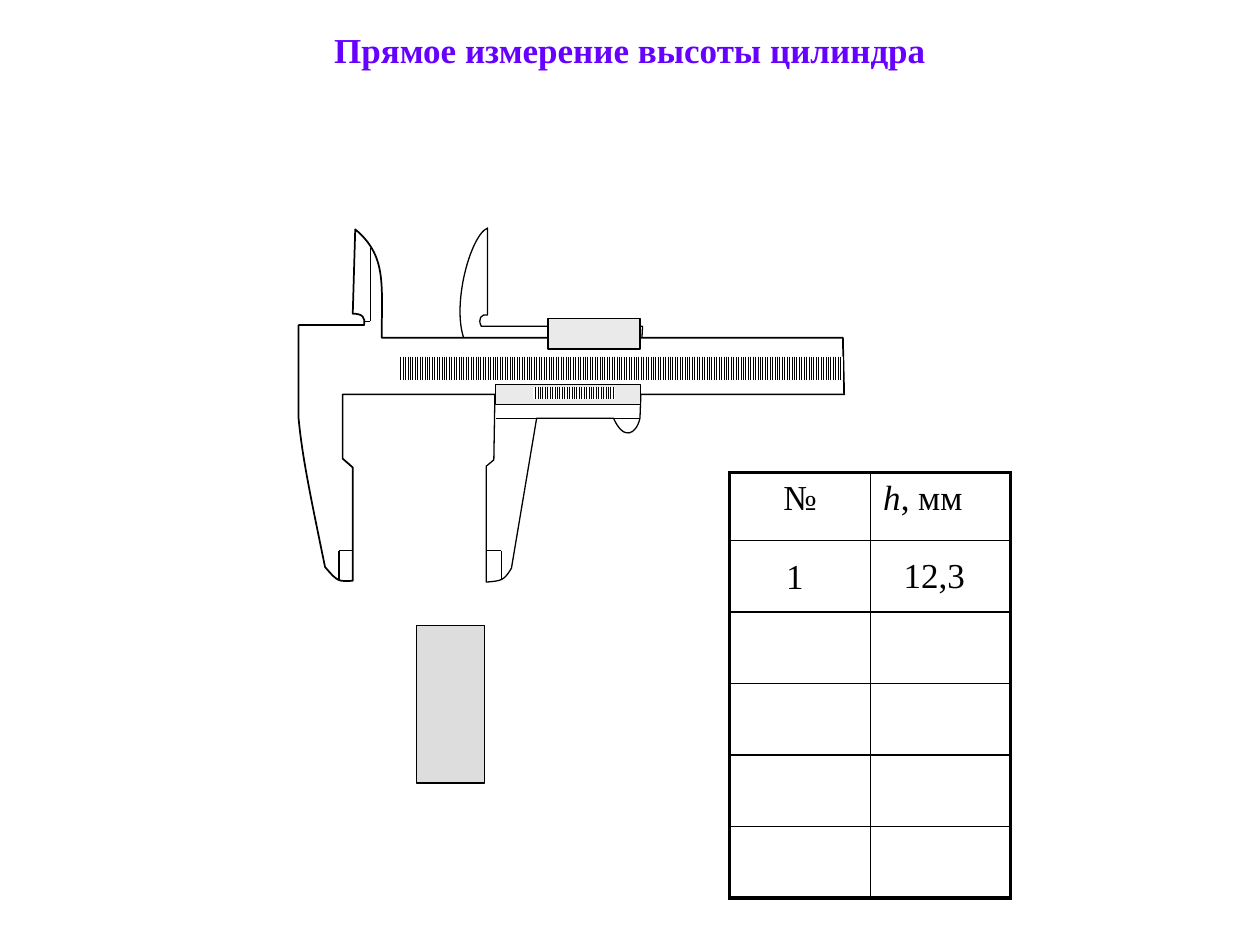
from lxml import etree
from pptx import Presentation
from pptx.dml.color import RGBColor
from pptx.enum.dml import MSO_PATTERN
from pptx.enum.shapes import MSO_CONNECTOR, MSO_SHAPE
from pptx.enum.text import MSO_ANCHOR, PP_ALIGN
from pptx.oxml.ns import qn
from pptx.util import Emu, Pt

COLUMNS, ROWS = 1000, 750
UNIT = 9144
RECTANGLE = MSO_SHAPE.RECTANGLE
STRAIGHT = MSO_CONNECTOR.STRAIGHT
TICKS = MSO_PATTERN.LIGHT_VERTICAL
MIDDLE, TOP = MSO_ANCHOR.MIDDLE, MSO_ANCHOR.TOP
LEFT, CENTER = PP_ALIGN.LEFT, PP_ALIGN.CENTER
BLACK, WHITE, GREY, SILVER, VIOLET = "000000", "FFFFFF", "DDDDDD", "EAEAEA", "6600FF"
BODY = {"name": "Times New Roman", "size": Pt(20)}

UPPER_SLIDE = [
    (509, 278), (374, 279), (354, 257, 372, 187, 387, 181), (387, 250),
    (382, 249, 379, 253, 382, 259), (510, 259),
]
LOWER_SLIDE = [
    (386, 462), (386, 415, 386, 370, 386, 370), (392, 365), (393, 305), (509, 305),
    (508, 332), (505, 345, 495, 350, 487, 332), (426, 332), (406, 451),
    (400, 461, 398, 461, 386, 462),
]
FIXED_JAW = [
    (280, 461), (269, 461, 269, 463, 258, 450), (247, 396, 240, 364, 237, 332),
    (237, 258), (289, 258), (290, 252, 288, 249, 280, 249), (282, 182),
    (307, 203, 303, 225, 303, 268), (669, 268), (670, 313), (272, 313),
    (272, 364), (280, 371), (280, 371, 280, 461, 280, 461),
]


def grid(*values):
    return [Emu(round(value * UNIT)) for value in values]


def color(value):
    return RGBColor.from_string(value)


def paint(shape, fill, width):
    shape.shadow.inherit = False
    shape.fill.solid()
    shape.fill.fore_color.rgb = color(fill)
    shape.line.color.rgb = color(BLACK)
    shape.line.width = Pt(width)


def bend(shape, segments):
    steps = iter(list(shape._element.iter(qn("a:lnTo"))))
    for segment in segments:
        group = [next(steps) for _ in range(len(segment) // 2)]
        if len(group) == 3:
            curve = etree.Element(qn("a:cubicBezTo"))
            group[0].addprevious(curve)
            for step in group:
                curve.append(step[0])
                step.getparent().remove(step)


def add_outline(shapes, segments, width):
    start, *rest = segments
    points = [segment[i:i + 2] for segment in rest for i in range(0, len(segment), 2)]
    builder = shapes.build_freeform(*grid(*start), scale=1.0)
    builder.add_line_segments([grid(*point) for point in points], close=True)
    shape = builder.convert_to_shape()
    bend(shape, rest)
    paint(shape, WHITE, width)


def add_rectangle(shapes, area, fill, width):
    shape = shapes.add_shape(RECTANGLE, *grid(*area))
    paint(shape, fill, width)
    return shape


def add_scale(shapes, area):
    shape = shapes.add_shape(RECTANGLE, *grid(*area))
    shape.shadow.inherit = False
    shape.fill.patterned()
    shape.fill.pattern = TICKS
    shape.fill.fore_color.rgb = color(BLACK)
    shape.fill.back_color.rgb = color(WHITE)
    shape.line.fill.background()


def add_line(shapes, ends, width=0.75):
    line = shapes.add_connector(STRAIGHT, *grid(*ends))
    line.line.color.rgb = color(BLACK)
    line.line.width = Pt(width)
    etree.SubElement(line._element.spPr, qn("a:effectLst"))


def write(para, words, ink=BLACK, **extra):
    span = para.add_run()
    span.text = words
    for name, value in {**BODY, **extra}.items():
        setattr(span.font, name, value)
    span.font.color.rgb = color(ink)


def add_text(shapes, area, words, align=LEFT, anchor=TOP, **style):
    box = shapes.add_textbox(*grid(*area))
    box.text_frame.word_wrap = True
    box.text_frame.vertical_anchor = anchor
    para = box.text_frame.paragraphs[0]
    para.alignment = align
    write(para, words, **style)


def set_borders(cell, widths):
    properties = cell._tc.get_or_add_tcPr()
    for position, (side, width) in enumerate(widths.items()):
        border = etree.Element(qn(f"a:{side}"), w=str(Pt(width)))
        fill = etree.SubElement(border, qn("a:solidFill"))
        etree.SubElement(fill, qn("a:srgbClr"), val=BLACK)
        properties.insert(position, border)


def add_results(shapes, area, widths, heights):
    table = shapes.add_table(len(heights), len(widths), *grid(*area)).table
    table.first_row = table.horz_banding = False
    for column, width in zip(table.columns, grid(*widths)):
        column.width = width
    for row, height in zip(table.rows, grid(*heights)):
        row.height = height
    last_row, last_column = len(heights) - 1, len(widths) - 1
    for r in range(len(heights)):
        for c in range(len(widths)):
            cell = table.cell(r, c)
            cell.fill.background()
            outer = {"lnL": c == 0, "lnR": c == last_column, "lnT": r == 0, "lnB": r == last_row}
            set_borders(cell, {side: 2.25 if edge else 1 for side, edge in outer.items()})
    number, height = (table.cell(0, c).text_frame.paragraphs[0] for c in (0, 1))
    number.alignment = CENTER
    write(number, "№")
    write(height, "h", italic=True)
    write(height, ", мм", italic=False)


def draw_sliding_jaw(shapes):
    add_outline(shapes, UPPER_SLIDE, 0.75)
    add_outline(shapes, LOWER_SLIDE, 0.75)
    add_line(shapes, (394, 332, 508, 332), 0.25)
    add_line(shapes, (398, 460, 398, 437))
    add_line(shapes, (398, 437, 386, 437))


def draw_fixed_jaw(shapes):
    add_outline(shapes, FIXED_JAW, 1)
    add_line(shapes, (269, 460, 269, 437))
    add_line(shapes, (269, 437, 280, 437))
    add_line(shapes, (289, 255, 294, 255))
    add_line(shapes, (294, 255, 294, 197))
    add_scale(shapes, (316, 283, 353, 19))


def draw_vernier(shapes):
    add_rectangle(shapes, (393, 305, 115, 16), SILVER, 0.25)
    add_rectangle(shapes, (435, 253, 73, 24), SILVER, 0.75)
    add_scale(shapes, (423, 307, 65, 10))


def main():
    deck = Presentation()
    deck.slide_width, deck.slide_height = grid(COLUMNS, ROWS)
    shapes = deck.slides.add_slide(deck.slide_layouts[6]).shapes
    draw_sliding_jaw(shapes.add_group_shape().shapes)
    add_text(shapes, (50, 0, 900, 79), "Прямое измерение высоты цилиндра",
             CENTER, MIDDLE, ink=VIOLET, bold=True)
    cylinder = add_rectangle(shapes, (295, 532, 125, 54), GREY, 0.75)
    cylinder.rotation = 270
    draw_fixed_jaw(shapes.add_group_shape().shapes)
    draw_vernier(shapes.add_group_shape().shapes)
    add_results(shapes, (579, 375, 223, 338), (112, 111), [54] + [56.8] * 5)
    add_text(shapes, (614, 435, 35, 43), "1")
    add_text(shapes, (702, 434, 79, 43), "12,3", CENTER)
    deck.save("out.pptx")


if __name__ == "__main__":
    main()
